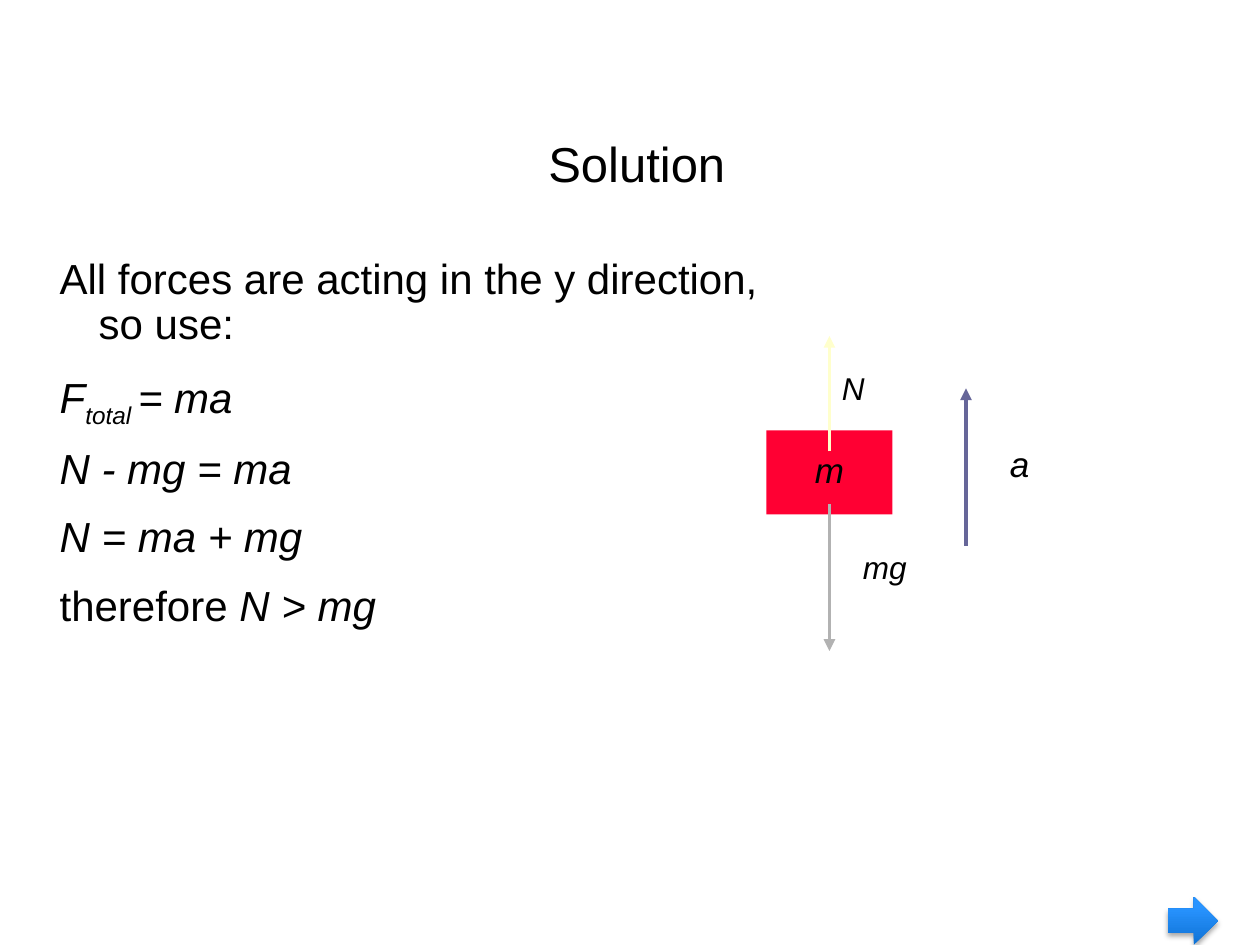
import pptx
import pptx.dml.color
import pptx.enum.shapes
import pptx.enum.text
import pptx.oxml
import pptx.oxml.ns
import pptx.util

COLORS = {
    "text": "000000", "block": "FF0033", "weight": "B2B2B2", "normal": "FFFFCC",
    "acceleration": "666699", "next_dark": "0F72D5", "next_light": "2994FF",
}
SHAPES = pptx.enum.shapes.MSO_SHAPE
ANCHOR = pptx.enum.text.MSO_ANCHOR
ALIGN = pptx.enum.text.PP_ALIGN
CELLS_PER_INCH = 12
HANG = pptx.util.Inches(0.31)
HANGING = {"line_spacing": 0.9}
SOFT_SHADOW = (
    f'<a:effectLst {pptx.oxml.ns.nsdecls("a")}>'
    '<a:outerShdw blurRad="39370" dist="22860" dir="5400000" rotWithShape="0">'
    '<a:srgbClr val="000000"><a:alpha val="35000"/></a:srgbClr>'
    '</a:outerShdw></a:effectLst>'
)


def rgb(name):
    return pptx.dml.color.RGBColor.from_string(COLORS[name])


def cells(*counts):
    """Turn counts of grid columns or rows into lengths."""
    return [pptx.util.Inches(count / CELLS_PER_INCH) for count in counts]


def apply_format(target, values):
    for name, value in values.items():
        setattr(target, name, value)


class SlideBuilder:
    """Draws on one slide, on a grid of 120 columns by 90 rows."""

    font = "Arial"
    line_width = pptx.util.Pt(2.25)

    def __init__(self, slide):
        self.shapes = slide.shapes

    def fill_frame(self, frame, paragraphs, size, hanging=True, **paragraph_format):
        """Fill a frame; a paragraph is a list of (text, italic, baseline) runs."""
        for index, runs in enumerate(paragraphs):
            paragraph = frame.add_paragraph() if index else frame.paragraphs[0]
            apply_format(paragraph, paragraph_format)
            if index:
                paragraph.space_before = pptx.util.Pt(13.5)
            if hanging:
                apply_format(paragraph, HANGING)
                properties = paragraph._p.get_or_add_pPr()
                properties.set("marL", str(HANG))
                properties.set("indent", str(-HANG))
            for text, italic, baseline in runs:
                run = paragraph.add_run()
                run.text = text
                apply_format(run.font, {"name": self.font, "size": pptx.util.Pt(size),
                                        "italic": italic})
                run.font.color.rgb = rgb("text")
                if baseline:
                    run._r.get_or_add_rPr().set("baseline", str(baseline * 1000))

    def text(self, box, paragraphs, size, anchor=ANCHOR.TOP, **options):
        frame = self.shapes.add_textbox(*cells(*box)).text_frame
        apply_format(frame, {"word_wrap": True, "vertical_anchor": anchor})
        self.fill_frame(frame, paragraphs, size, **options)

    def label(self, box, symbol, size):
        self.text(box, [[(symbol, True, 0)]], size)

    def block(self, box, symbol, size):
        block = self.shapes.add_shape(SHAPES.RECTANGLE, *cells(*box))
        block.shadow.inherit = False
        block.fill.solid()
        block.fill.fore_color.rgb = rgb("block")
        block.line.fill.background()
        apply_format(block.text_frame,
                     {"word_wrap": False, "vertical_anchor": ANCHOR.MIDDLE})
        self.fill_frame(block.text_frame, [[(symbol, True, 0)]], size,
                        alignment=ALIGN.CENTER)

    def force(self, column, start_row, end_row, color):
        """Draw a vertical arrow that points at end_row."""
        arrow = self.shapes.add_connector(
            pptx.enum.shapes.MSO_CONNECTOR.STRAIGHT,
            *cells(column, start_row, column, end_row))
        arrow.line.color.rgb = rgb(color)
        arrow.line.width = self.line_width
        namespace = pptx.oxml.ns.nsdecls("a")
        arrow.line._get_or_add_ln().append(
            pptx.oxml.parse_xml(f'<a:tailEnd {namespace} type="triangle"/>'))
        arrow._element.spPr.append(pptx.oxml.parse_xml(f'<a:effectLst {namespace}/>'))

    def next_arrow(self, box):
        arrow = self.shapes.add_shape(SHAPES.RIGHT_ARROW, *cells(*box))
        arrow.line.fill.background()
        arrow.fill.gradient()
        arrow.fill.gradient_angle = 90
        shades = (("next_dark", 0), ("next_light", 0.8))
        for stop, (color, position) in zip(arrow.fill.gradient_stops, shades):
            stop.color.rgb = rgb(color)
            stop.position = position
        arrow._element.spPr.append(pptx.oxml.parse_xml(SOFT_SHADOW))


def main():
    deck = pptx.Presentation()
    deck.slide_width, deck.slide_height = cells(120, 90)
    slide = SlideBuilder(deck.slides.add_slide(deck.slide_layouts[6]))

    slide.text((11, 8, 98, 15), [[(" ", True, 0), ("Solution", False, 0)]], 28,
               anchor=ANCHOR.MIDDLE, hanging=False, alignment=ALIGN.CENTER)

    slide.block((73, 41, 12, 8), "m", 20)
    slide.force(79, 48, 62, "weight")
    slide.force(79, 43, 32, "normal")
    slide.label((79, 35, 11, 4.4), "N", 18)
    slide.label((81, 52, 10, 4.4), "mg", 18)

    slide.text((4.5, 24, 73.5, 43.8), [
        [("All forces are acting in the y direction, so use:", False, 0)],
        [("F", True, 0), ("total ", True, -25), ("= ma", True, 0)],
        [("N - mg = ma", True, 0)],
        [("N = ma + mg", True, 0)],
        [("therefore ", False, 0), ("N > mg", True, 0)],
    ], 24)

    slide.force(92, 52, 37, "acceleration")
    slide.label((95, 42, 7, 4.8), "a", 20)
    slide.next_arrow((111.2, 85.4, 4.8, 4.6))
    deck.save("out.pptx")


if __name__ == "__main__":
    main()
